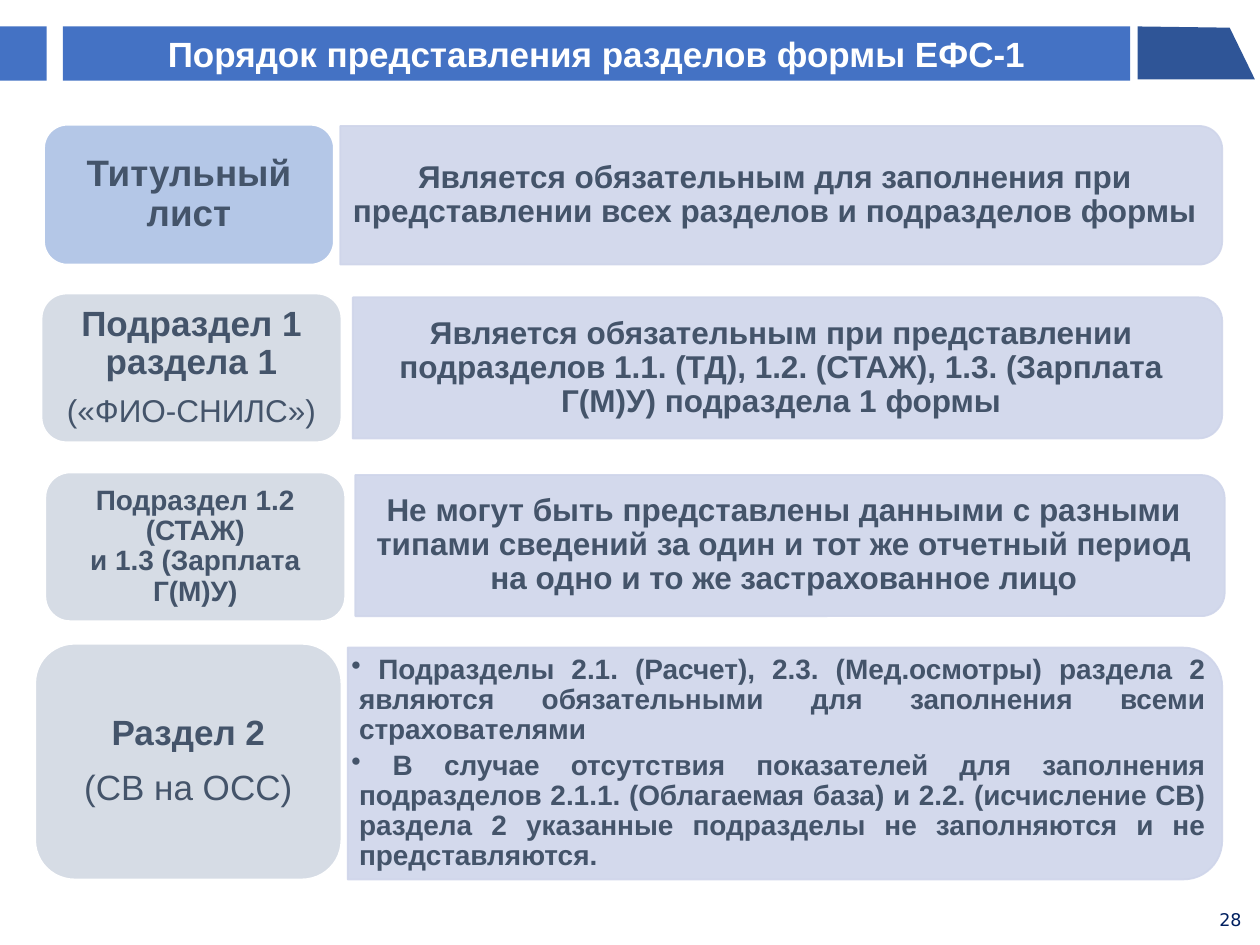
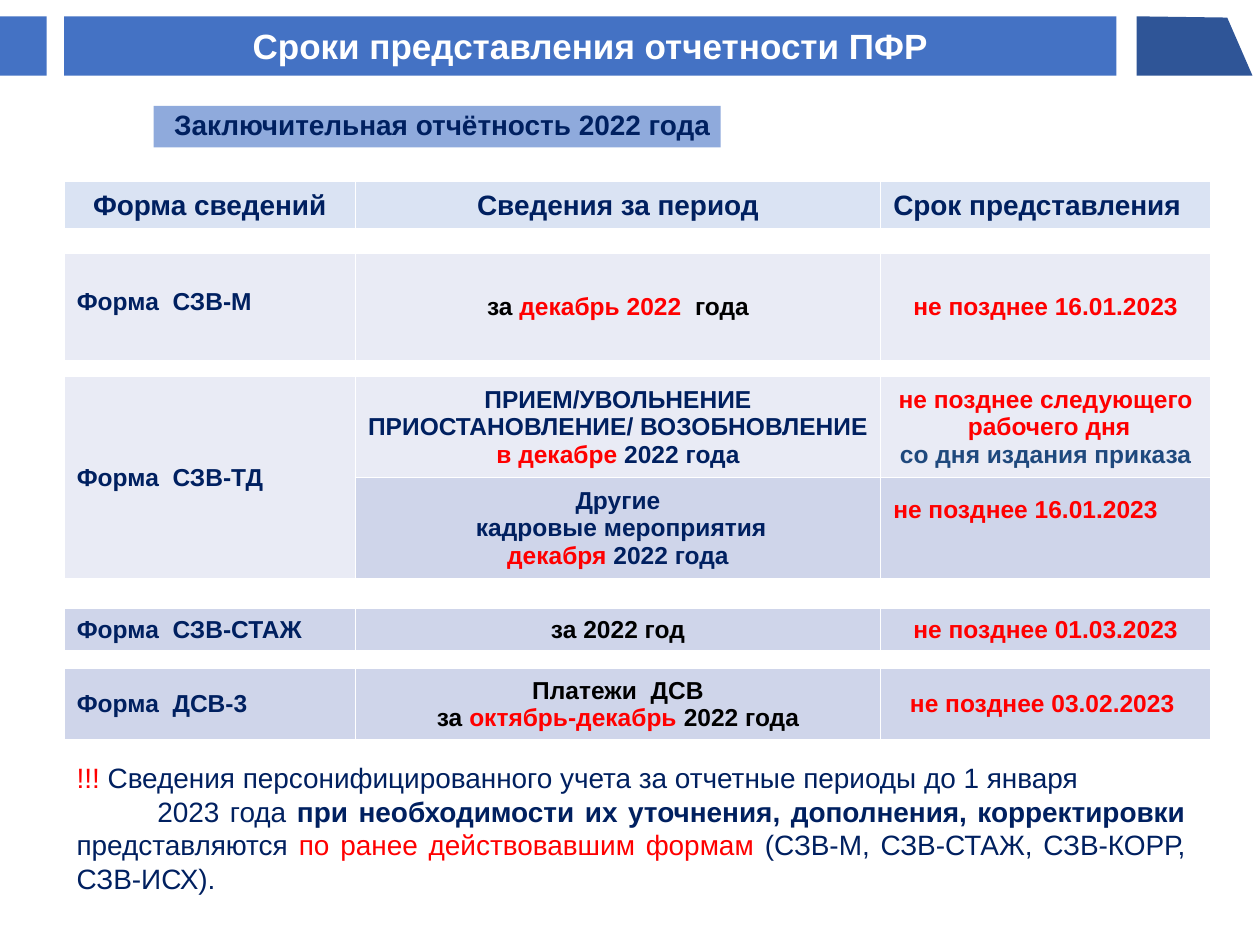
from dataclasses import dataclass
from typing import NamedTuple

from lxml import etree
from pptx import Presentation
from pptx import util as u
from pptx.dml.color import RGBColor
from pptx.enum import shapes as es, text as et
from pptx.oxml.ns import qn

PX = 9144  # EMU in one px, 100 px to the inch

WHITE = RGBColor(0xFF, 0xFF, 0xFF)
BLACK = RGBColor(0, 0, 0)
RED = RGBColor(0xFF, 0, 0)
NAVY = RGBColor(0, 0x20, 0x60)
STEEL = RGBColor(0x1F, 0x49, 0x7D)
SLATE = RGBColor(0x44, 0x54, 0x6A)
BLUE = RGBColor(0x44, 0x72, 0xC4)
DEEP = RGBColor(0x2F, 0x55, 0x97)
SKY = RGBColor(0x8F, 0xAA, 0xDC)
LIGHT = RGBColor(0xB4, 0xC7, 0xE7)
GREY = RGBColor(0xD6, 0xDC, 0xE5)
HEAD = RGBColor(0xDA, 0xE3, 0xF3)
PALE = RGBColor(0xE9, 0xEB, 0xF5)
LILAC = RGBColor(0xCF, 0xD5, 0xEA)

LEFT, MID, JUST = et.PP_ALIGN.LEFT, et.PP_ALIGN.CENTER, et.PP_ALIGN.JUSTIFY
RECT, ROUND = es.MSO_SHAPE.RECTANGLE, es.MSO_SHAPE.ROUNDED_RECTANGLE
TAB = es.MSO_SHAPE.ROUND_2_SAME_RECTANGLE


class Box(NamedTuple):
    left: int
    top: int
    width: int
    height: int


class Run(NamedTuple):
    text: str
    color: RGBColor = NAVY
    bold: bool = True


@dataclass
class Para:
    runs: list[Run]
    size: int = 14
    align: int = MID
    space: float = 1
    gap: int = 0
    indent: int = 0
    bullet: bool = False
    font: str = "Arial"


@dataclass
class Card:
    """A rounded label with a note to its right."""
    label: Box
    fill: RGBColor
    head: list[Para]
    note: Box
    body: list[Para]


@dataclass
class Cell:
    paras: list[Para]
    fill: RGBColor
    lift: int = 0


def apply(item, **form) -> None:
    for key, value in form.items():
        setattr(item, key, value)


def emu(box: Box) -> list[int]:
    return [n * PX for n in box]


def write(frame, paras: list[Para], pad: int = 4) -> None:
    apply(frame, word_wrap=True, vertical_anchor=et.MSO_ANCHOR.MIDDLE,
          margin_left=pad * PX, margin_right=pad * PX,
          margin_top=3 * PX, margin_bottom=3 * PX)
    fill_text(frame, paras)


def fill_text(frame, paras: list[Para]) -> None:
    for i, para in enumerate(paras):
        line = frame.add_paragraph() if i else frame.paragraphs[0]
        apply(line, alignment=para.align, line_spacing=para.space,
              space_before=u.Pt(para.gap), space_after=u.Pt(0))
        prop = line._p.get_or_add_pPr()
        if para.bullet:
            prop.set("marL", str(6 * PX))
            prop.set("indent", str(-6 * PX))
            etree.SubElement(prop, qn("a:buChar"), char="•")
        elif para.indent:
            prop.set("indent", str(para.indent * PX))
        for part in para.runs:
            run = line.add_run()
            run.text = part.text
            apply(run.font, size=u.Pt(para.size), name=para.font, bold=part.bold)
            run.font.color.rgb = part.color


def paint(shape, fill: RGBColor, edge: RGBColor | None = None) -> None:
    shape.shadow.inherit = False
    shape.fill.solid()
    shape.fill.fore_color.rgb = fill
    if edge is None:
        shape.line.fill.background()
    else:
        shape.line.color.rgb = edge
        shape.line.width = u.Pt(1)


def add_box(slide, kind, box: Box, fill: RGBColor, edge: RGBColor | None = None):
    shape = slide.shapes.add_shape(kind, *emu(box))
    paint(shape, fill, edge)
    return shape


def add_text(slide, box: Box, paras: list[Para], pad: int = 3):
    frame = slide.shapes.add_textbox(*emu(box)).text_frame
    write(frame, paras, pad)
    return frame


def add_band(slide, title: str, bar: Box, tip: Box) -> None:
    """Draw the title bar with its stub on the left and slanted tip on the right."""
    add_box(slide, RECT, Box(0, bar.top, 37, bar.height), BLUE)
    shape = add_box(slide, RECT, bar, BLUE)
    write(shape.text_frame, [Para([Run(title, WHITE)], 20)])
    x, y, wide, high = tip
    form = slide.shapes.build_freeform(x, y, scale=PX)
    form.add_line_segments([(x, y + high), (x + wide, y + high), (x + wide - 20, y + 1)])
    paint(form.convert_to_shape(), DEEP)


def add_card(slide, card: Card) -> None:
    label = add_box(slide, ROUND, card.label, card.fill, WHITE)
    write(label.text_frame, card.head, 6)
    x, y, wide, high = card.note
    turned = Box(x + (wide - high) // 2, y + (high - wide) // 2, high, wide)
    tab = add_box(slide, TAB, turned, LILAC, LILAC)
    tab.rotation = 90
    for color in tab._element.spPr.iter(qn("a:srgbClr")):
        etree.SubElement(color, qn("a:alpha"), val="90000")
    add_text(slide, Box(x, y + 5, wide - 10, high - 10), card.body)


def edge_cell(cell, base: float) -> None:
    prop = cell._tc.get_or_add_tcPr()
    for side, width in zip("LRTB", (1, 1, 1, base)):
        line = etree.SubElement(prop, qn(f"a:ln{side}"), w=str(u.Pt(width)))
        fill = etree.SubElement(line, qn("a:solidFill"))
        etree.SubElement(fill, qn("a:srgbClr"), val=str(WHITE))


def add_table(slide, left: int, top: int, cols: list[int], rows: list[int],
              cells: dict[int, list[Cell | None]]) -> None:
    """Draw a table; rows without cells are thin, unfilled gaps."""
    box = Box(left, top, sum(cols), sum(rows))
    table = slide.shapes.add_table(len(rows), len(cols), *emu(box)).table
    apply(table, first_row=False, horz_banding=False)
    for col, width in zip(table.columns, cols):
        col.width = width * PX
    for r, height in enumerate(rows):
        table.rows[r].height = height * PX
        for c in range(len(cols)):
            cell = table.cell(r, c)
            edge_cell(cell, 1 if r else 3)
            data = cells[r][c] if r in cells else None
            if data is None:
                cell.fill.background()
                apply(cell, margin_top=0, margin_bottom=0)
                etree.SubElement(cell.text_frame.paragraphs[0]._p,
                                 qn("a:endParaRPr"), sz="100")
                continue
            cell.fill.solid()
            cell.fill.fore_color.rgb = data.fill
            apply(cell, vertical_anchor=et.MSO_ANCHOR.MIDDLE,
                  margin_bottom=(5 + data.lift) * PX)
            fill_text(cell.text_frame, data.paras)
    for r, row in cells.items():
        if row[0] is None:
            table.cell(r - 1, 0).merge(table.cell(r, 0))


def dark(words: str, size: int, bold: bool = True, gap: int = 0, **more) -> Para:
    return Para([Run(words, SLATE, bold)], size, space=0.9, gap=gap, **more)


def cell(fill: RGBColor, *lines: list[Run], size: int = 14, align=MID, lift: int = 0) -> Cell:
    return Cell([Para(runs, size, align) for runs in lines], fill, lift)


def form_cell(name: str, fill: RGBColor, lift: int = 0) -> Cell:
    return cell(fill, [Run("Форма  " + name)], align=LEFT, lift=lift)


def due_cell(date: str, fill: RGBColor, **more) -> Cell:
    return cell(fill, [Run("не позднее " + date, RED)], **more)


CARDS = [
    Card(Box(35, 99, 230, 111), LIGHT, [dark("Титульный лист", 21)],
         Box(270, 100, 700, 110),
         [dark("Является обязательным для заполнения при представлении "
               "всех разделов и подразделов формы", 18)]),
    Card(Box(33, 233, 238, 118), GREY,
         [dark("Подраздел 1 раздела 1", 20), dark("(«ФИО-СНИЛС»)", 18, False, 8)],
         Box(280, 236, 690, 112),
         [dark("Является обязательным при представлении подразделов 1.1. (ТД), "
               "1.2. (СТАЖ), 1.3. (Зарплата Г(М)У) подраздела 1 формы", 18)]),
    Card(Box(36, 375, 238, 118), GREY,
         [dark("Подраздел 1.2 (СТАЖ)", 16), dark("и 1.3 (Зарплата Г(М)У)", 16)],
         Box(282, 377, 690, 112),
         [dark("Не могут быть представлены данными с разными типами сведений за один "
               "и тот же отчетный период на одно и то же застрахованное лицо", 18)]),
    Card(Box(28, 511, 243, 187), GREY,
         [dark("Раздел 2", 20), dark("(СВ на ОСС)", 20, False, 10)],
         Box(276, 514, 694, 184),
         [dark(" Подразделы 2.1. (Расчет), 2.3. (Мед.осмотры) раздела 2 являются "
               "обязательными для заполнения всеми страхователями", 16,
               align=JUST, bullet=True),
          dark(" В случае отсутствия показателей для заполнения подразделов 2.1.1. "
               "(Облагаемая база) и 2.2. (исчисление СВ) раздела 2 указанные "
               "подразделы не заполняются и не представляются.", 16,
               gap=3, align=JUST, bullet=True)]),
]

COLS = [231, 417, 262]
ROWS = [39, 18, 85, 13, 79, 80, 24, 33, 14, 57]
CELLS = {
    0: [cell(HEAD, [Run("Форма сведений")], size=16),
        cell(HEAD, [Run("Сведения за период")], size=16),
        cell(HEAD, [Run("Срок представления")], size=16, align=LEFT)],
    2: [form_cell("СЗВ-М", PALE, 8),
        cell(PALE, [Run("за ", BLACK), Run("декабрь 2022 ", RED), Run(" года", BLACK)]),
        due_cell("16.01.2023", PALE)],
    4: [form_cell("СЗВ-ТД", PALE),
        cell(PALE, [Run("ПРИЕМ/УВОЛЬНЕНИЕ")], [Run("ПРИОСТАНОВЛЕНИЕ/ ВОЗОБНОВЛЕНИЕ")],
             [Run("в декабре ", RED), Run("2022 года")]),
        cell(PALE, [Run("не позднее следующего", RED)], [Run(" рабочего дня", RED)],
             [Run("со дня издания приказа", STEEL)])],
    5: [None,
        cell(LILAC, [Run("Другие")], [Run(" кадровые мероприятия")],
             [Run("декабря ", RED), Run("2022 года")]),
        due_cell("16.01.2023", LILAC, align=LEFT, lift=29)],
    7: [form_cell("СЗВ-СТАЖ", LILAC),
        cell(LILAC, [Run("за 2022 год", BLACK)]),
        due_cell("01.03.2023", LILAC)],
    9: [form_cell("ДСВ-3", LILAC),
        cell(LILAC, [Run("Платежи  ДСВ", BLACK)],
             [Run("за ", BLACK), Run("октябрь-декабрь ", RED), Run("2022 года", BLACK)]),
        due_cell("03.02.2023 ", LILAC)],
}

REMARK = [
    Para([Run("!!!", RED, False),
          Run(" Сведения персонифицированного учета за отчетные периоды до 1 января",
              bold=False)], 16, LEFT),
    Para([Run("2023 года ", bold=False),
          Run("при необходимости их уточнения, дополнения, корректировки "),
          Run("представляются ", bold=False),
          Run("по ранее действовавшим формам ", RED, False),
          Run("(СЗВ-М, СЗВ-СТАЖ, СЗВ-КОРР, СЗВ-ИСХ).", bold=False)], 16, JUST, indent=64),
]


def draw_order(slide) -> None:
    add_band(slide, "Порядок представления разделов формы ЕФС-1",
             Box(50, 21, 847, 43), Box(903, 21, 93, 42))
    for card in CARDS:
        add_card(slide, card)
    add_text(slide, Box(957, 714, 39, 31),
             [Para([Run("28", bold=False)], 10, font="DejaVu Sans")])


def draw_terms(slide) -> None:
    add_band(slide, "Сроки представления отчетности ПФР",
             Box(51, 13, 835, 47), Box(902, 13, 92, 47))
    plate = add_box(slide, RECT, Box(122, 84, 450, 33), SKY)
    write(plate.text_frame, [Para([Run("Заключительная отчётность 2022 года")], 16, space=0.9)])
    plate.text_frame.margin_left, plate.text_frame.margin_right = 8 * PX, 0
    add_table(slide, 51, 144, COLS, ROWS, CELLS)
    add_text(slide, Box(51, 598, 900, 118), REMARK, 10)


def main() -> None:
    deck = Presentation()
    apply(deck, slide_width=1000 * PX, slide_height=750 * PX)
    for draw in (draw_order, draw_terms):
        draw(deck.slides.add_slide(deck.slide_layouts[6]))
    deck.save("out.pptx")


if __name__ == "__main__":
    main()
